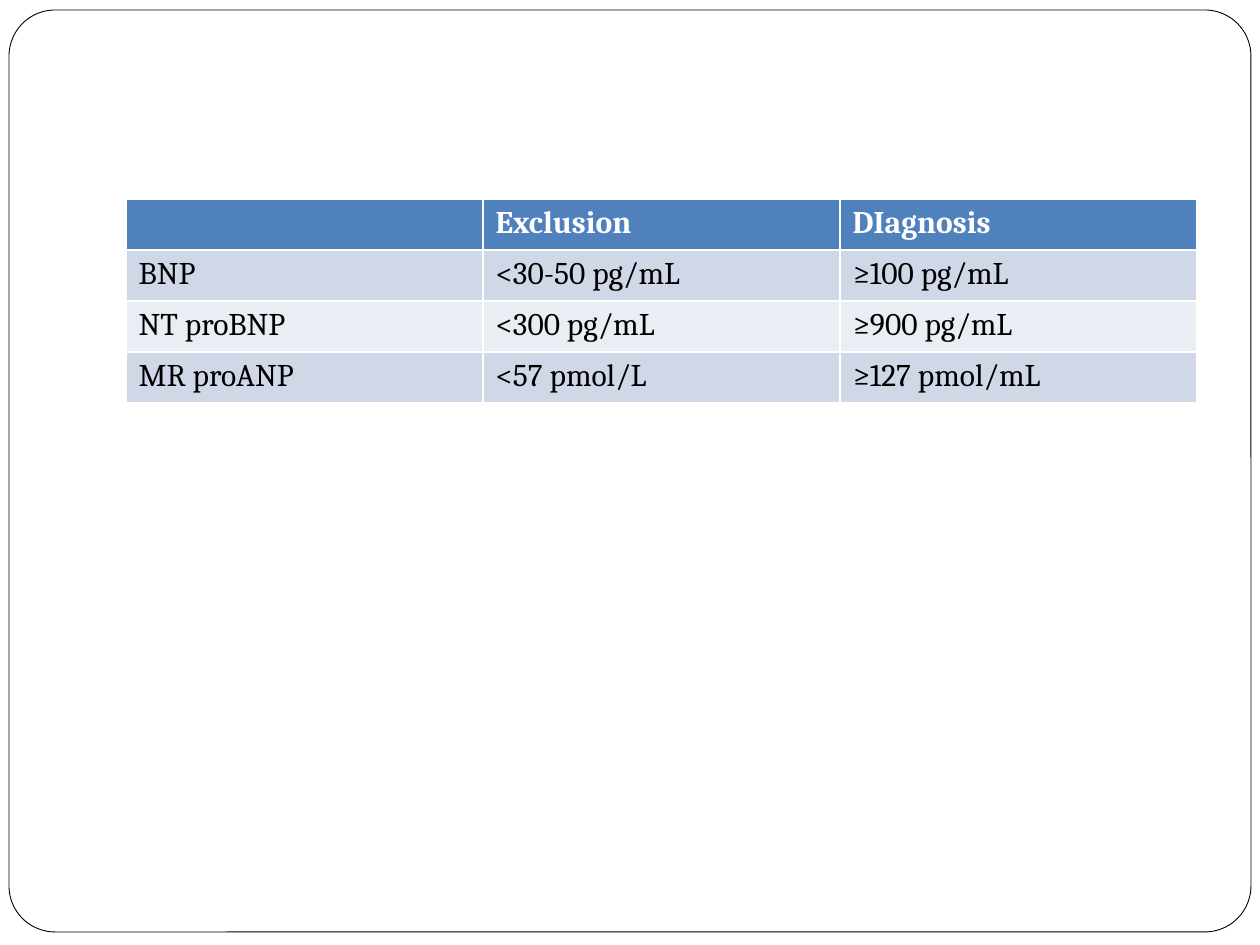
import pptx
import pptx.dml.color
import pptx.enum.shapes
import pptx.util

EMU_PER_PX = 914400 // 126
FONT_NAME = "Cambria"
BLACK = pptx.dml.color.RGBColor(0x00, 0x00, 0x00)
WHITE = pptx.dml.color.RGBColor(0xFF, 0xFF, 0xFF)
HEADER_BLUE = pptx.dml.color.RGBColor(0x4F, 0x81, 0xBD)
DARK_BAND = pptx.dml.color.RGBColor(0xD0, 0xD8, 0xE8)
LIGHT_BAND = pptx.dml.color.RGBColor(0xE9, 0xED, 0xF4)

CUTOFFS = [
    ["", "Exclusion", "DIagnosis"],
    ["BNP", "<30-50 pg/mL", "≥100 pg/mL"],
    ["NT proBNP", "<300 pg/mL", "≥900 pg/mL"],
    ["MR proANP", "<57 pmol/L", "≥127 pmol/mL"],
]


def px(length):
    return pptx.util.Emu(length * EMU_PER_PX)


def add_frame(slide, left, top, width, height):
    frame = slide.shapes.add_shape(
        pptx.enum.shapes.MSO_SHAPE.ROUNDED_RECTANGLE,
        px(left), px(top), px(width), px(height))
    frame.adjustments[0] = 0.05
    frame.shadow.inherit = False
    frame.fill.solid()
    frame.fill.fore_color.rgb = WHITE
    frame.line.color.rgb = BLACK
    frame.line.width = pptx.util.Pt(0.5)


def format_cell(cell, text, fill_color, is_header):
    cell.text = text
    cell.fill.solid()
    cell.fill.fore_color.rgb = fill_color
    font = cell.text_frame.paragraphs[0].font
    font.name = FONT_NAME
    font.size = pptx.util.Pt(18)
    font.bold = is_header
    font.color.rgb = WHITE if is_header else BLACK


def add_table(slide, rows, left, top, column_width, row_height):
    column_count = len(rows[0])
    table = slide.shapes.add_table(
        len(rows), column_count, px(left), px(top),
        px(column_width * column_count), px(row_height * len(rows))).table
    for row_index, row in enumerate(rows):
        is_header = row_index == 0
        band = DARK_BAND if row_index % 2 else LIGHT_BAND
        fill_color = HEADER_BLUE if is_header else band
        for column_index, text in enumerate(row):
            cell = table.cell(row_index, column_index)
            format_cell(cell, text, fill_color, is_header)


def main():
    presentation = pptx.Presentation()
    presentation.slide_width = px(1260)
    presentation.slide_height = px(945)
    slide = presentation.slides.add_slide(presentation.slide_layouts[6])
    add_frame(slide, 9, 10, 1242, 922)
    add_table(slide, CUTOFFS, 126, 199, 357, 51)
    presentation.save("out.pptx")


if __name__ == "__main__":
    main()
